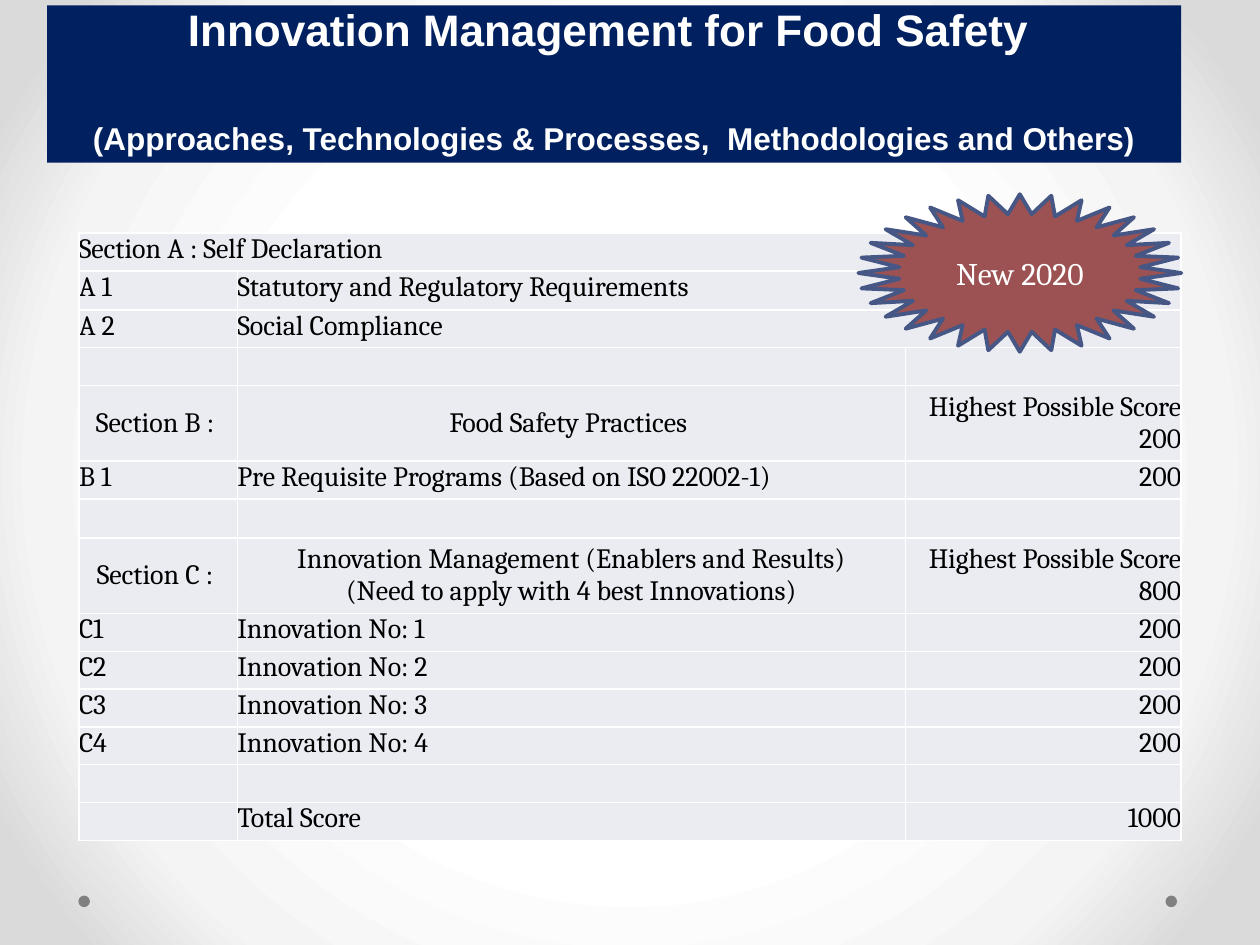
from typing import NamedTuple

from lxml.etree import SubElement
from pptx import Presentation
from pptx.dml.color import RGBColor
from pptx.enum.shapes import MSO_SHAPE
from pptx.enum.text import MSO_ANCHOR, PP_ALIGN
from pptx.oxml import parse_xml
from pptx.oxml.ns import nsdecls, qn
from pptx.util import Pt

WHITE = RGBColor(0xFF, 0xFF, 0xFF)
BLACK = RGBColor(0x00, 0x00, 0x00)
NAVY = RGBColor(0x00, 0x20, 0x60)
GRAY = RGBColor(0x80, 0x80, 0x80)
CELL_FILL = RGBColor(0xEA, 0xEC, 0xF2)
BADGE_FILL = RGBColor(0x9C, 0x52, 0x52)
BADGE_LINE = RGBColor(0x47, 0x57, 0x85)
BACKGROUND_STOPS = ((50, WHITE), (76, RGBColor(0xF4, 0xF4, 0xF4)), (92, RGBColor(0xDA, 0xDA, 0xDA)))
BODY_FONT = "Cambria"
BODY_SIZE = 16


class Box(NamedTuple):
    left: float
    top: float
    width: float
    height: float


class ScoreRow(NamedTuple):
    label: str = ""
    topic: str = ""
    score: str = ""
    height: float = 21.6
    span_start: int = 2
    heading: bool = False


COLUMN_WIDTHS = (90.6, 381.8, 157.6)
ROWS = (
    ScoreRow("Section A : Self Declaration", span_start=0),
    ScoreRow("A 1", "Statutory and Regulatory Requirements", height=22.3, span_start=1),
    ScoreRow("A 2", "Social Compliance", span_start=1),
    ScoreRow(),
    ScoreRow("Section B : ", "Food Safety Practices ", "Highest Possible Score 200", 43.2, heading=True),
    ScoreRow("B 1", "Pre Requisite Programs (Based on ISO 22002-1)", "200"),
    ScoreRow(height=22.3),
    ScoreRow(
        "Section C : ",
        "Innovation Management (Enablers and Results)\v(Need to apply with 4 best Innovations)",
        "Highest Possible Score 800",
        43.2,
        heading=True,
    ),
    *(ScoreRow(f"C{number}", f"Innovation No: {number}", "200") for number in range(1, 5)),
    ScoreRow(),
    ScoreRow(topic="Total Score", score="1000"),
)


def write(paragraph, text: str, *, size: float = BODY_SIZE, font: str = BODY_FONT,
          color: RGBColor = BLACK, bold: bool = False, align=PP_ALIGN.LEFT) -> None:
    """Append formatted text to a paragraph, with a line break at each vertical tab."""
    paragraph.alignment = align
    for index, line in enumerate(text.split("\v")):
        if index:
            paragraph.add_line_break()
        run = paragraph.add_run()
        run.text = line
        run.font.size = Pt(size)
        run.font.name = font
        run.font.bold = bold
        run.font.color.rgb = color


def add_filled_shape(slide, preset, box: Box, fill: RGBColor, line: RGBColor | None = None):
    """Add a flat preset shape with an optional outline."""
    shape = slide.shapes.add_shape(preset, *(Pt(length) for length in box))
    shape.shadow.inherit = False
    shape.fill.solid()
    shape.fill.fore_color.rgb = fill
    if line is None:
        shape.line.fill.background()
    else:
        shape.line.color.rgb = line
        shape.line.width = Pt(2.25)
    return shape


def paint_background(slide) -> None:
    """Give the slide a circular gradient from its centre."""
    fill = slide.background.fill
    fill.solid()
    properties = slide.background._cSld.bg.bgPr
    stops = "".join(
        f'<a:gs pos="{position * 1000}"><a:srgbClr val="{color}"/></a:gs>'
        for position, color in BACKGROUND_STOPS
    )
    gradient = parse_xml(
        f'<a:gradFill {nsdecls("a")} rotWithShape="1"><a:gsLst>{stops}</a:gsLst>'
        '<a:path path="circle"><a:fillToRect l="50000" t="50000" r="50000" b="50000"/></a:path>'
        "</a:gradFill>"
    )
    properties.replace(properties.find(qn("a:solidFill")), gradient)


def format_cell(cell) -> None:
    """Set white borders, no margins and the pale fill of a cell."""
    cell.margin_left = cell.margin_right = cell.margin_top = cell.margin_bottom = 0
    properties = cell._tc.get_or_add_tcPr()
    for side in ("L", "R", "T", "B"):
        border = SubElement(properties, qn(f"a:ln{side}"), w=str(Pt(1)))
        solid = SubElement(border, qn("a:solidFill"))
        SubElement(solid, qn("a:srgbClr"), val=str(WHITE))
    cell.fill.solid()
    cell.fill.fore_color.rgb = CELL_FILL


def add_score_table(slide, box: Box) -> None:
    """Draw the table of sections and scores."""
    frame = slide.shapes.add_table(len(ROWS), len(COLUMN_WIDTHS), *(Pt(length) for length in box))
    table = frame.table
    table.first_row = table.horz_banding = False
    for column, width in zip(table.columns, COLUMN_WIDTHS):
        column.width = Pt(width)
    for row_index, row in enumerate(ROWS):
        table.rows[row_index].height = Pt(row.height)
        text_align = PP_ALIGN.CENTER if row.heading else PP_ALIGN.LEFT
        for column_index, text in enumerate((row.label, row.topic, row.score)):
            cell = table.cell(row_index, column_index)
            format_cell(cell)
            cell.vertical_anchor = MSO_ANCHOR.MIDDLE if row.heading else MSO_ANCHOR.TOP
            paragraph = cell.text_frame.paragraphs[0]
            if text:
                write(paragraph, text, align=PP_ALIGN.RIGHT if column_index == 2 else text_align)
            else:
                SubElement(paragraph._p, qn("a:endParaRPr"), sz=str(BODY_SIZE * 100))
        if row.span_start < 2:
            table.cell(row_index, row.span_start).merge(table.cell(row_index, 2))


def add_title(slide) -> None:
    """Draw the title banner with its two lines."""
    banner = add_filled_shape(slide, MSO_SHAPE.RECTANGLE, Box(27, 3, 648, 90), NAVY)
    banner.text_frame.word_wrap = True
    banner.text_frame.vertical_anchor = MSO_ANCHOR.BOTTOM
    paragraph = banner.text_frame.paragraphs[0]
    paragraph.line_spacing = Pt(58)
    style = {"font": "Arial", "color": WHITE, "bold": True, "align": PP_ALIGN.CENTER}
    write(paragraph, "Innovation Management for Food Safety ", size=25.2, **style)
    paragraph.add_line_break()
    write(paragraph, "(Approaches, Technologies & Processes,  Methodologies and Others)", size=18, **style)


def add_badge(slide) -> None:
    """Draw the starburst that marks the new edition."""
    badge = add_filled_shape(slide, MSO_SHAPE.STAR_32_POINT, Box(490.5, 111, 184.5, 90), BADGE_FILL, BADGE_LINE)
    badge.text_frame.vertical_anchor = MSO_ANCHOR.MIDDLE
    write(badge.text_frame.paragraphs[0], "New 2020", size=18, color=WHITE, align=PP_ALIGN.CENTER)


def main() -> None:
    """Build the slide and save it."""
    presentation = Presentation()
    presentation.slide_width, presentation.slide_height = Pt(720), Pt(540)
    slide = presentation.slides.add_slide(presentation.slide_layouts[6])
    paint_background(slide)
    for left in (666, 44.8):
        add_filled_shape(slide, MSO_SHAPE.OVAL, Box(left, 511.8, 6.6, 6.6), GRAY)
    add_title(slide)
    add_score_table(slide, Box(45, 133.2, 630, 347))
    add_badge(slide)
    presentation.save("out.pptx")


if __name__ == "__main__":
    main()
